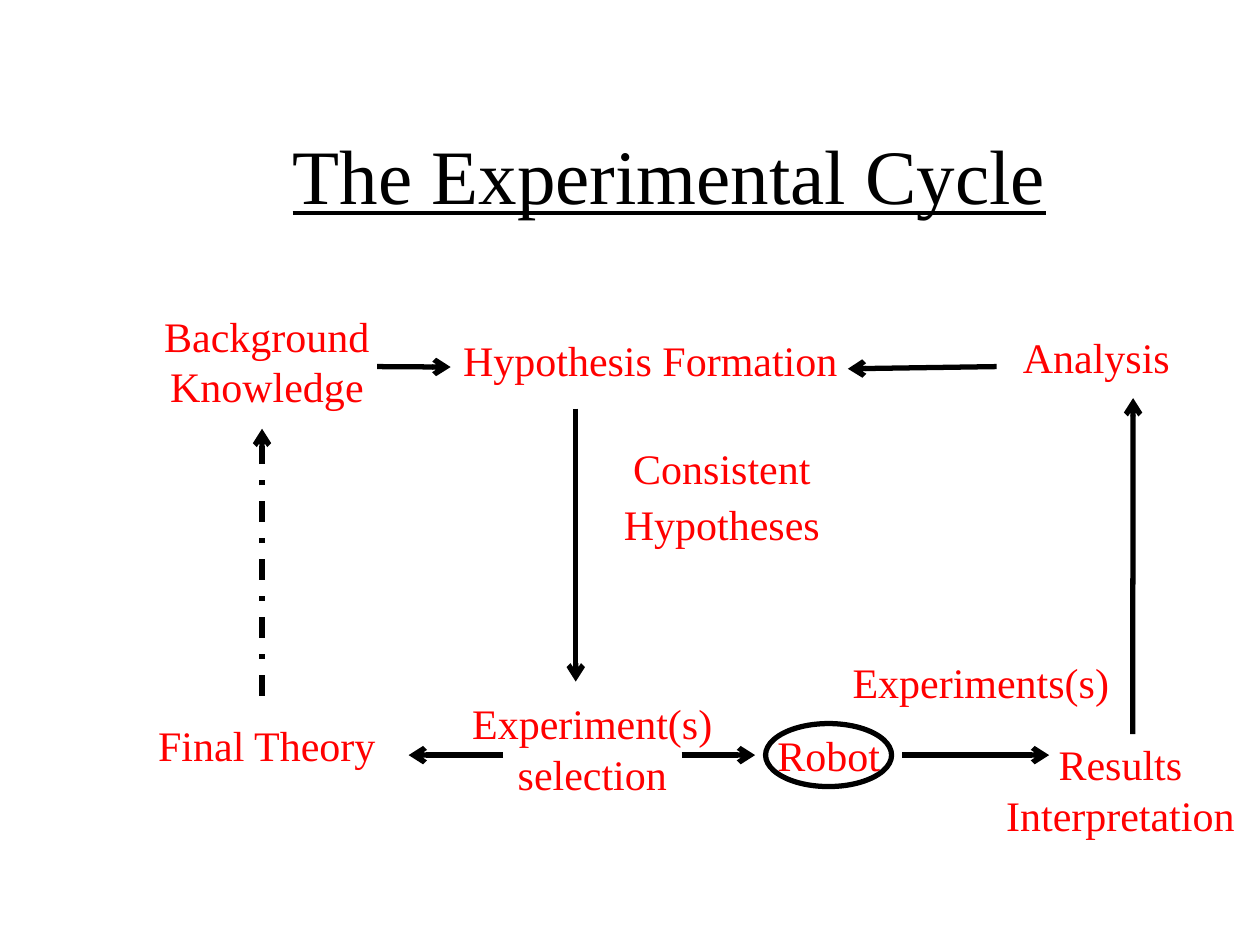
from dataclasses import dataclass

import pptx
import pptx.dml.color
import pptx.enum.dml
import pptx.enum.shapes
import pptx.enum.text
import pptx.oxml.ns
import pptx.slide
import pptx.util
from lxml import etree

Pt = pptx.util.Pt
Align = pptx.enum.text.PP_ALIGN
Anchor = pptx.enum.text.MSO_ANCHOR
Dash = pptx.enum.dml.MSO_LINE

BLACK = pptx.dml.color.RGBColor(0, 0, 0)
RED = pptx.dml.color.RGBColor(255, 0, 0)
FONT = "Times New Roman"
LINE_WIDTH = 3
LOWER_ROW = 431.5  # height of the arrows along the bottom of the cycle


@dataclass(frozen=True)
class Label:
    text: str
    left: float
    top: float
    width: float
    height: float = 36
    line_spacing: float = 1.0
    gap: float = 0


@dataclass(frozen=True)
class Arrow:
    start: tuple[float, float]
    end: tuple[float, float]
    dash: Dash = Dash.SOLID


TITLE = Label("The Experimental Cycle", 76.5, 54.5, 612, 90)
HYPOTHESIS = Label("Hypothesis Formation", 257.5, 187.5, 240)
STAGES = [
    Label("Background Knowledge", 59.5, 173.5, 186, 65),
    Label("Analysis", 551.5, 186, 150),
    Label("Consistent\nHypotheses", 319.5, 256, 186, 62, line_spacing=0.7, gap=12),
    Label("Final Theory", 65.5, 407.5, 174),
    Label("Experiment(s) selection", 233.5, 395, 210, 65),
    Label("Robot", 407.5, 413.5, 132),
    Label("Experiments(s)", 479.5, 371.5, 162),
    Label("Results\nInterpretation", 547, 418.5, 186.5, 65),
]

ARROWS = [
    Arrow((329, 233.5), (329, 389.5)),
    Arrow((569.5, 209.5), (484.5, 210.75)),
    Arrow((287.5, LOWER_ROW), (233.5, LOWER_ROW)),
    Arrow((215.5, 209.5), (257.5, 209.75)),
    Arrow((389.5, LOWER_ROW), (431.5, LOWER_ROW)),
    Arrow((515.5, LOWER_ROW), (599.5, LOWER_ROW)),
    Arrow((647.25, 419.5), (647.5, 227.5)),
    Arrow((149.75, 397.5), (149.75, 245), Dash.DASH_DOT),
]


def add_label(
    page: pptx.slide.Slide,
    label: Label,
    *,
    size: float = 24,
    color: pptx.dml.color.RGBColor = RED,
    underline: bool = False,
    align: Align = Align.CENTER,
    anchor: Anchor = Anchor.MIDDLE,
) -> None:
    box = page.shapes.add_textbox(
        Pt(label.left), Pt(label.top), Pt(label.width), Pt(label.height)
    )
    frame = box.text_frame
    frame.word_wrap = True
    frame.vertical_anchor = anchor
    frame.text = label.text
    for index, para in enumerate(frame.paragraphs):
        para.alignment = align
        para.line_spacing = label.line_spacing
        para.space_before = Pt(label.gap if index else 0)
        for span in para.runs:
            span.font.name = FONT
            span.font.size = Pt(size)
            span.font.color.rgb = color
            span.font.underline = underline


def add_arrow(page: pptx.slide.Slide, arrow: Arrow) -> None:
    connector = page.shapes.add_connector(
        pptx.enum.shapes.MSO_CONNECTOR.STRAIGHT,
        *(Pt(value) for value in arrow.start + arrow.end),
    )
    connector.line.color.rgb = BLACK
    connector.line.width = Pt(LINE_WIDTH)
    connector.line.dash_style = arrow.dash
    qn = pptx.oxml.ns.qn
    properties = connector.element.spPr
    etree.SubElement(properties.find(qn("a:ln")), qn("a:tailEnd"), type="arrow")
    etree.SubElement(properties, qn("a:effectLst"))


def add_robot_ring(page: pptx.slide.Slide) -> None:
    ring = page.shapes.add_shape(
        pptx.enum.shapes.MSO_SHAPE.OVAL, Pt(437.5), Pt(413.5), Pt(72), Pt(36)
    )
    ring.shadow.inherit = False
    ring.fill.background()
    ring.line.color.rgb = BLACK
    ring.line.width = Pt(LINE_WIDTH)


def main() -> None:
    deck = pptx.Presentation()
    deck.slide_width, deck.slide_height = Pt(720), Pt(540)
    page = deck.slides.add_slide(deck.slide_layouts[6])

    add_label(page, TITLE, size=44, color=BLACK, underline=True)
    for stage in STAGES:
        add_label(page, stage)
    for arrow in ARROWS:
        add_arrow(page, arrow)
    add_robot_ring(page)
    add_label(page, HYPOTHESIS, align=Align.LEFT, anchor=Anchor.TOP)

    deck.save("out.pptx")


if __name__ == "__main__":
    main()
